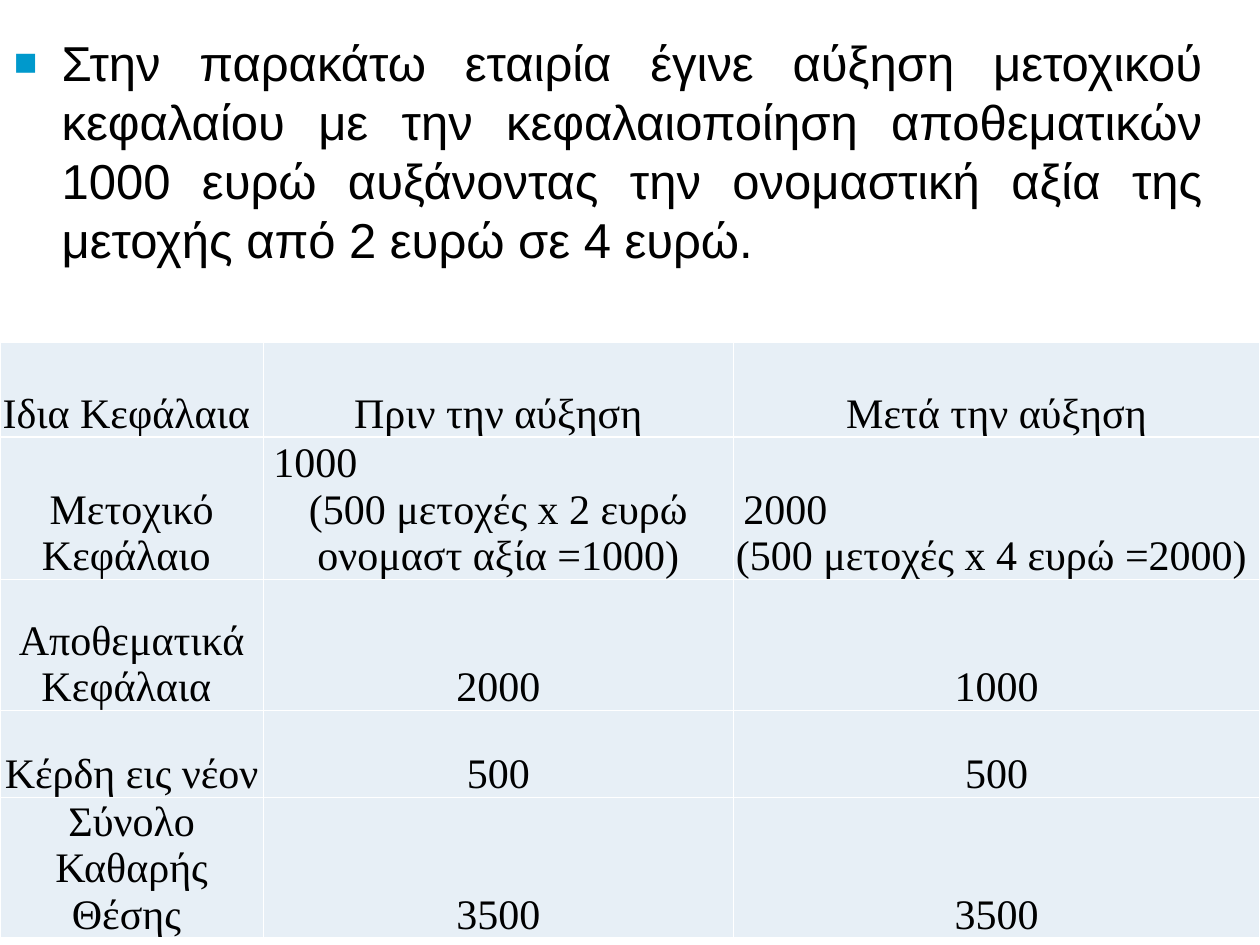
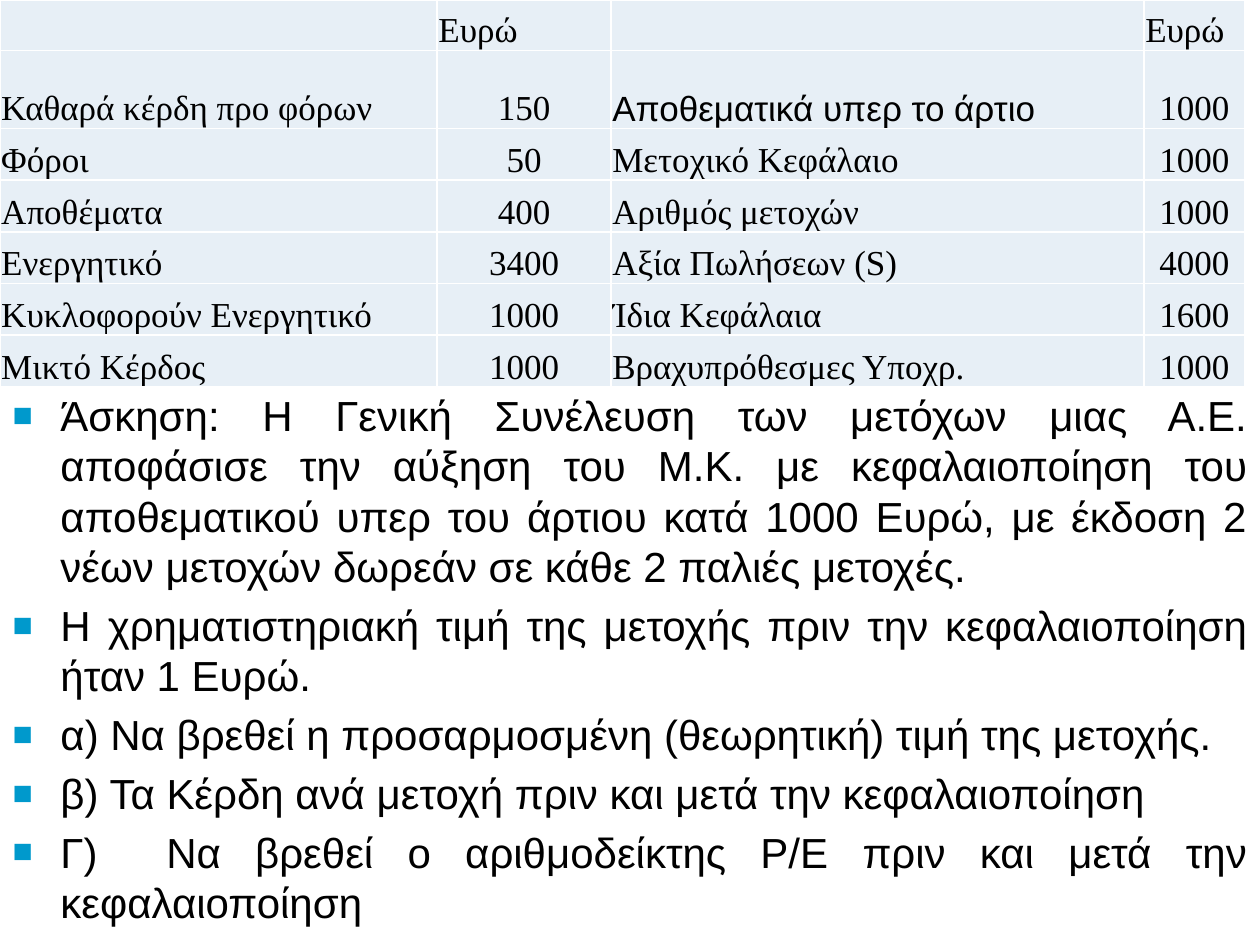
from lxml.etree import SubElement
from pptx import Presentation
from pptx.dml.color import RGBColor
from pptx.enum.text import MSO_ANCHOR, MSO_AUTO_SIZE, PP_ALIGN
from pptx.oxml import parse_xml
from pptx.oxml.ns import nsdecls, qn
from pptx.util import Inches, Pt

HUE = {"text": "000000", "mark": "0099CC", "cell": "E7EFF6",
       "line": "FFFFFF", "back": "FFFFFF"}
SANS, SERIF = "Arial", "Times New Roman"
LEFT, MID, FULL = PP_ALIGN.LEFT, PP_ALIGN.CENTER, PP_ALIGN.JUSTIFY

RAISE = ["Στην παρακάτω εταιρία έγινε αύξηση μετοχικού κεφαλαίου με την "
         "κεφαλαιοποίηση αποθεματικών 1000 ευρώ αυξάνοντας την ονομαστική "
         "αξία της μετοχής από 2 ευρώ σε 4 ευρώ. "]
EQUITY = [
    ["Ιδια Κεφάλαια ", "Πριν την αύξηση", "Μετά την αύξηση"],
    ["Μετοχικό Κεφάλαιο ",
     "1000\n(500 μετοχές x 2 ευρώ ονομαστ αξία =1000)",
     "2000\n(500 μετοχές x 4 ευρώ =2000) "],
    ["Αποθεματικά Κεφάλαια ", "2000", "1000"],
    ["Κέρδη εις νέον ", "500", "500"],
    ["Σύνολο Καθαρής Θέσης ", "3500", "3500"],
]
FIGURES = [
    ["", "Ευρώ", "", "Ευρώ"],
    ["Καθαρά κέρδη προ φόρων", "150", "Αποθεματικά υπερ το άρτιο", "1000"],
    ["Φόροι", "50", "Μετοχικό Κεφάλαιο", "1000"],
    ["Αποθέματα", "400", "Αριθμός μετοχών", "1000"],
    ["Ενεργητικό", "3400", "Αξία Πωλήσεων (S)", "4000"],
    ["Κυκλοφορούν Ενεργητικό", "1000", "Ίδια Κεφάλαια", "1600"],
    ["Μικτό Κέρδος", "1000", "Βραχυπρόθεσμες Υποχρ.", "1000"],
]
TASK = [
    "Άσκηση: Η Γενική Συνέλευση των μετόχων μιας Α.Ε. αποφάσισε την αύξηση "
    "του Μ.Κ. με κεφαλαιοποίηση του αποθεματικού υπερ του άρτιου κατά 1000 "
    "Ευρώ, με έκδοση 2 νέων μετοχών δωρεάν σε κάθε 2 παλιές μετοχές.",
    "Η χρηματιστηριακή τιμή της μετοχής πριν την κεφαλαιοποίηση ήταν 1 Ευρώ.",
    "α) Να βρεθεί η προσαρμοσμένη (θεωρητική) τιμή της μετοχής.",
    "β) Τα Κέρδη ανά μετοχή πριν και μετά την κεφαλαιοποίηση ",
    "Γ)  Να βρεθεί ο αριθμοδείκτης P/E πριν και μετά την κεφαλαιοποίηση ",
]


def paint(part, name):
    part.fill.solid()
    part.fill.fore_color.rgb = RGBColor.from_string(HUE[name])


def style(par, face, size, align):
    par.alignment = align
    par.font.name = face
    par.font.size = Pt(size)
    par.font.bold = False
    par.font.color.rgb = RGBColor.from_string(HUE["text"])


def bullet(par):
    props = par._p.get_or_add_pPr()
    props.set("marL", str(Inches(0.38)))
    props.set("indent", str(-Inches(0.38)))
    marks = [
        f'<a:buClr {nsdecls("a")}><a:srgbClr val="{HUE["mark"]}"/></a:buClr>',
        f'<a:buSzPct {nsdecls("a")} val="80000"/>',
        f'<a:buFont {nsdecls("a")} typeface="{SANS}"/>',
        f'<a:buChar {nsdecls("a")} char="■"/>',
    ]
    last = props.find(qn("a:defRPr"))
    for mark in marks:
        last.addprevious(parse_xml(mark))


def add_points(slide, box, lines, size):
    body = slide.placeholders[1]
    body.left, body.top, body.width, body.height = map(Inches, box)
    frame = body.text_frame
    frame.word_wrap = True
    frame.auto_size = MSO_AUTO_SIZE.NONE
    frame.vertical_anchor = MSO_ANCHOR.TOP
    frame.text = "\n".join(lines)
    for par in frame.paragraphs:
        style(par, SANS, size, FULL)
        par.space_before = Pt(size * 0.2)
        bullet(par)
    return body


def border(cell):
    props = cell._tc.get_or_add_tcPr()
    for spot, side in enumerate(("lnL", "lnR", "lnT", "lnB")):
        line = parse_xml(f'<a:{side} {nsdecls("a")} w="{Pt(1)}"/>')
        fill = SubElement(line, qn("a:solidFill"))
        SubElement(fill, qn("a:srgbClr"), val=HUE["line"])
        props.insert(spot, line)


def add_grid(slide, spot, cols, rows, data, size, look):
    left, top = map(Inches, spot)
    grid = slide.shapes.add_table(len(rows), len(cols), left, top,
                                  Inches(sum(cols)), Inches(sum(rows))).table
    grid.first_row = grid.horz_banding = False
    for col, width in zip(grid.columns, cols):
        col.width = Inches(width)
    for row, height in zip(grid.rows, rows):
        row.height = Inches(height)
    for r, line in enumerate(data):
        for c, text in enumerate(line):
            cell = grid.cell(r, c)
            cell.text = text
            paint(cell, "cell")
            cell.margin_left = cell.margin_right = cell.margin_top = Inches(0.01)
            cell.margin_bottom = 0
            cell.vertical_anchor = MSO_ANCHOR.BOTTOM
            border(cell)
            face, align, space = look(r, c)
            for par in cell.text_frame.paragraphs:
                style(par, face, size, align)
                par.line_spacing = space
            if "\n" in text:
                head = cell.text_frame.paragraphs[0]
                head.alignment = LEFT
                head._p.get_or_add_pPr().set("marL", str(Inches(0.07)))


def equity_look(r, c):
    return SERIF, MID, 1.0


def figure_look(r, c):
    face = SANS if (r, c) == (1, 2) else SERIF
    return face, MID if r and c % 2 else FULL, 1.15


def new_slide(deck):
    slide = deck.slides.add_slide(deck.slide_layouts[1])
    title = slide.shapes.title.element
    title.getparent().remove(title)
    return slide


def raise_slide(deck):
    slide = new_slide(deck)
    body = add_points(slide, (0.01, 0.21, 9.63, 2.28), RAISE, 28)
    paint(body, "back")
    add_grid(slide, (0, 2.72), [2.09, 3.73, 4.18],
             [0.75, 1.13, 1.04, 0.69, 1.04], EQUITY, 24, equity_look)


def task_slide(deck):
    slide = new_slide(deck)
    add_grid(slide, (0, 0), [3.47, 1.38, 4.23, 0.8],
             [0.4, 0.62] + [0.41] * 5, FIGURES, 20, figure_look)
    add_points(slide, (0, 3.04, 10, 4.46), TASK, 24)


def main():
    deck = Presentation()
    deck.slide_width, deck.slide_height = Inches(10), Inches(7.5)
    raise_slide(deck)
    task_slide(deck)
    deck.save("out.pptx")


if __name__ == "__main__":
    main()
